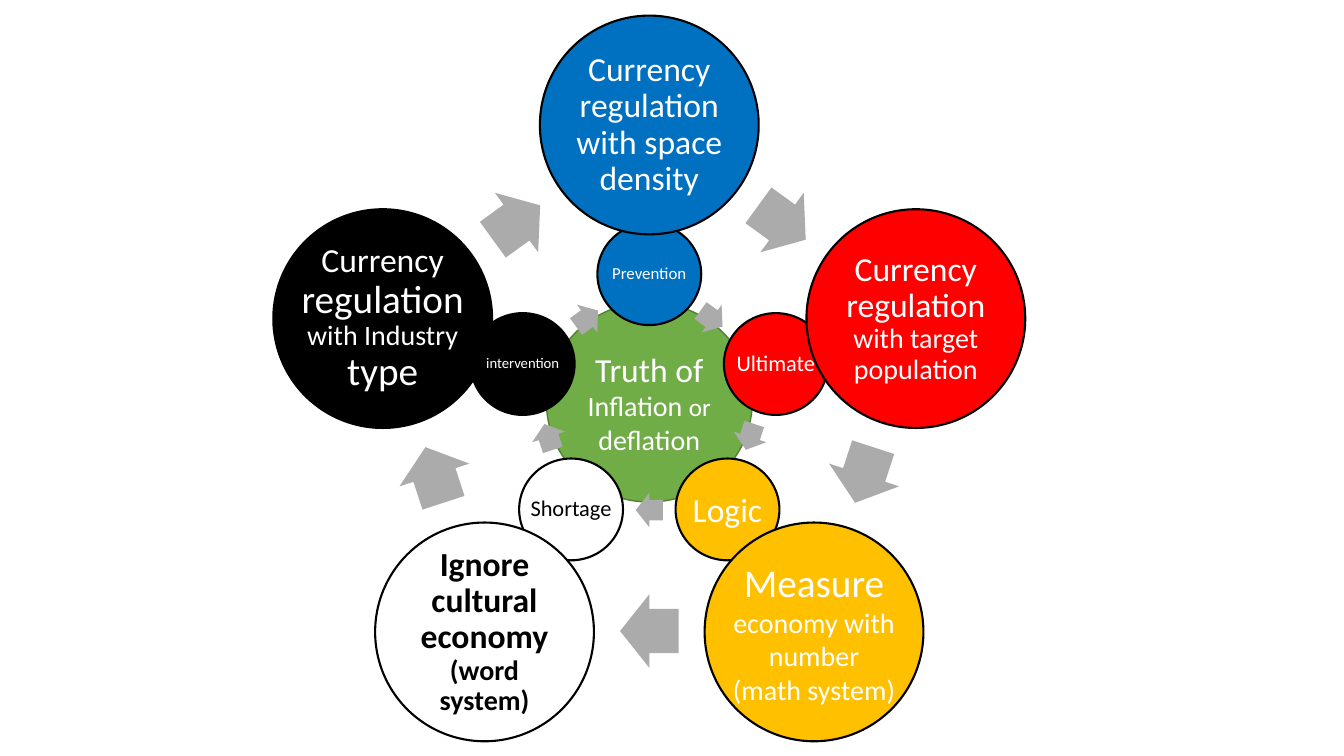
from dataclasses import dataclass
from math import cos, radians, sin

from pptx import Presentation
from pptx.dml.color import RGBColor
from pptx.enum.shapes import MSO_SHAPE as Shape
from pptx.enum.text import MSO_ANCHOR as Anchor, PP_ALIGN as Align
from pptx.util import Inches, Pt

FONT = "Calibri"
BLACK, WHITE, GREY = "000000", "FFFFFF", "ABABAB"
BLUE, RED, GOLD, GREEN = "0070C0", "FF0000", "FFC000", "70AD47"
CENTER_X = 6.44


@dataclass
class Node:
    """A circle; a run that begins with a newline starts a new line."""
    fill: str
    runs: list[tuple[str, float]]
    color: str = WHITE
    bold: bool = False
    spacing: float = 0.9


@dataclass
class Ring:
    """Circles on a ring, with an arrow halfway between neighbours."""
    nodes: list[Node]
    cy: float
    radius_x: float
    radius_y: float
    node_w: float
    node_h: float
    arrow_radius: float
    arrow_w: float
    arrow_h: float


HUB = Node(GREEN, [("Truth of ", 24), ("Inflation ", 20), ("or", 18), (" deflation", 20)],
           spacing=1)

INNER = Ring([
    Node(BLUE, [("Prevention", 12)]),
    Node(RED, [("Ultimate", 16)]),
    Node(GOLD, [("Logic", 24)], spacing=1),
    Node(WHITE, [("Shortage", 16)], BLACK),
    Node(BLACK, [("intervention", 10.5)]),
], 4.01, 1.32, 1.29, 1.03, 1.01, 1.05, 0.27, 0.34)

OUTER = Ring([
    Node(BLUE, [("Currency", 24), ("\nregulation", 24), ("\nwith space", 24),
                ("\ndensity", 24)]),
    Node(RED, [("Currency", 24), ("\nregulation", 24), ("\nwith target", 20),
               ("\npopulation", 20)]),
    Node(GOLD, [("Measure", 28), ("\neconomy with", 20), ("\nnumber", 20),
                ("\n(math system)", 20)], spacing=1),
    Node(WHITE, [("Ignore", 24), ("\ncultural", 24), ("\neconomy", 24),
                 ("\n(word", 20), ("\nsystem)", 20)], BLACK, bold=True),
    Node(BLACK, [("Currency", 24), ("\nregulation", 28), ("\nwith Industry", 20),
                 ("\ntype", 28)]),
], 4.02, 2.78, 2.78, 2.17, 2.17, 2.24, 0.58, 0.73)


def rgb(color: str) -> RGBColor:
    return RGBColor.from_string(color)


def add_centered(s, kind, cx: float, cy: float, w: float, h: float, fill: str):
    sp = s.shapes.add_shape(kind, Inches(cx - w / 2), Inches(cy - h / 2),
                            Inches(w), Inches(h))
    sp.shadow.inherit = False
    sp.fill.solid()
    sp.fill.fore_color.rgb = rgb(fill)
    return sp


def add_node(s, node: Node, cx: float, cy: float, w: float, h: float,
             line: str = BLACK, line_pt: float = 1.5, wrap: bool = False) -> None:
    sp = add_centered(s, Shape.OVAL, cx, cy, w, h, node.fill)
    sp.line.color.rgb = rgb(line)
    sp.line.width = Pt(line_pt)
    tf = sp.text_frame
    tf.word_wrap = wrap
    tf.vertical_anchor = Anchor.MIDDLE
    if not wrap:
        tf.margin_left = tf.margin_right = tf.margin_top = tf.margin_bottom = 0
    p = tf.paragraphs[0]
    p.alignment = Align.CENTER
    p.line_spacing = node.spacing
    for text, size in node.runs:
        if text.startswith("\n"):
            p.add_line_break()
        r = p.add_run()
        r.text = text.lstrip("\n")
        r.font.name = FONT
        r.font.size = Pt(size)
        r.font.bold = node.bold
        r.font.color.rgb = rgb(node.color)


def add_arrow(s, ring: Ring, angle: float) -> None:
    cx = CENTER_X + ring.arrow_radius * sin(radians(angle))
    cy = ring.cy - ring.arrow_radius * cos(radians(angle))
    sp = add_centered(s, Shape.RIGHT_ARROW, cx, cy, ring.arrow_w, ring.arrow_h, GREY)
    sp.line.fill.background()
    sp.adjustments[0] = 0.6
    sp.adjustments[1] = 0.5
    sp.rotation = angle


def add_ring(s, ring: Ring) -> None:
    step = 360 / len(ring.nodes)
    for i, node in enumerate(ring.nodes):
        angle = i * step
        cx = CENTER_X + ring.radius_x * sin(radians(angle))
        cy = ring.cy - ring.radius_y * cos(radians(angle))
        add_node(s, node, cx, cy, ring.node_w, ring.node_h)
        add_arrow(s, ring, angle + step / 2)


def main() -> None:
    prs = Presentation()
    prs.slide_width, prs.slide_height = Inches(13.33), Inches(7.5)
    s = prs.slides.add_slide(prs.slide_layouts[6])

    # Hub behind the two rings
    add_node(s, HUB, CENTER_X, 3.99, 2.04, 1.98, "538035", 1, wrap=True)

    # Rings, inner one first
    for ring in (INNER, OUTER):
        add_ring(s, ring)

    prs.save("out.pptx")


if __name__ == "__main__":
    main()
